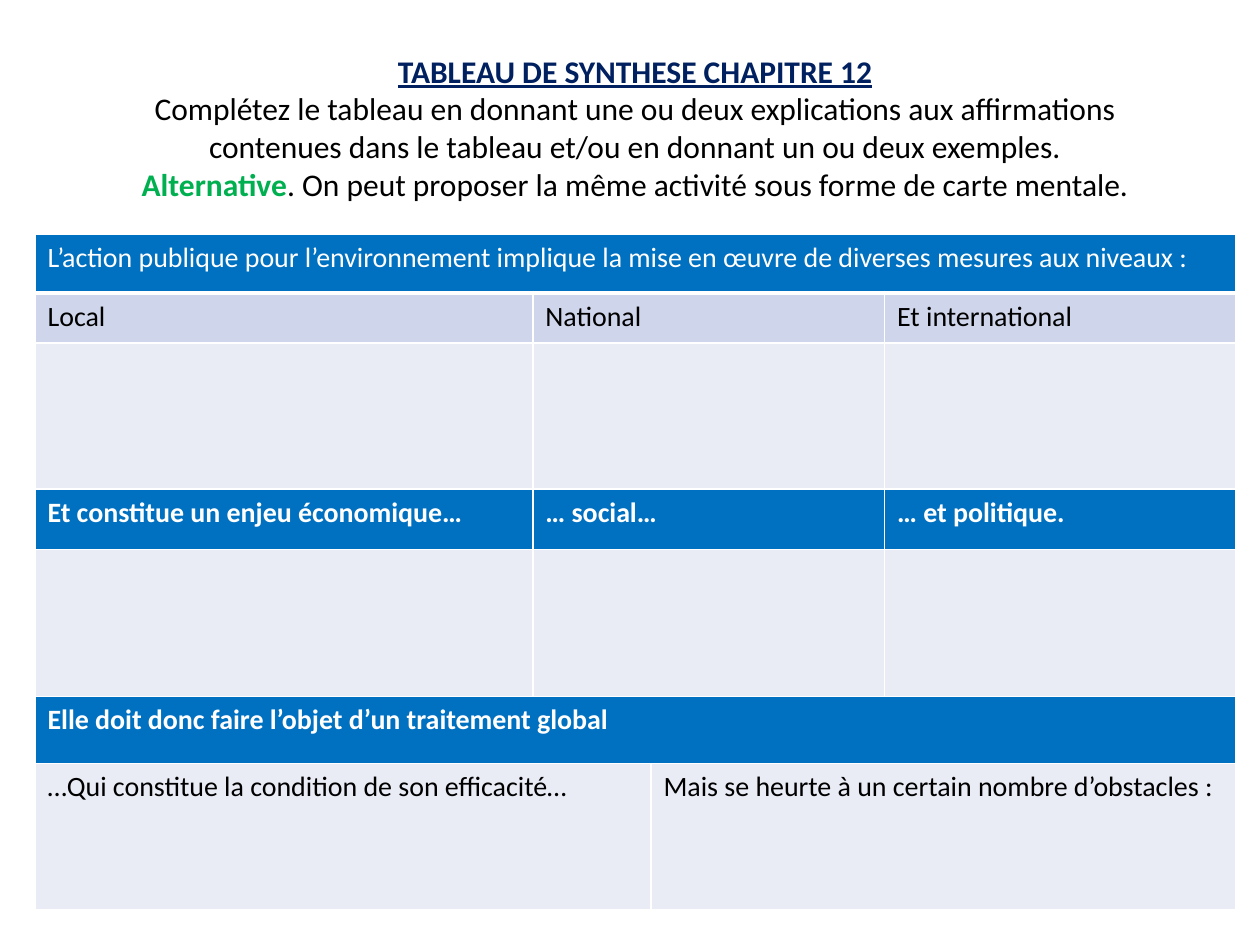
from lxml.etree import SubElement
from pptx import Presentation
from pptx.dml.color import RGBColor
from pptx.enum.text import MSO_AUTO_SIZE as AutoSize, PP_ALIGN as Align
from pptx.oxml.ns import qn
from pptx.util import Pt

NAVY = RGBColor(0x00, 0x20, 0x60)
GREEN = RGBColor(0x00, 0xB0, 0x50)
BLUE = RGBColor(0x00, 0x70, 0xC0)
LAVENDER = RGBColor(0xCF, 0xD5, 0xEA)
PALE = RGBColor(0xE9, 0xEB, 0xF5)
BLACK = RGBColor(0x00, 0x00, 0x00)
WHITE = RGBColor(0xFF, 0xFF, 0xFF)

# Heading: one list of (text, format) runs per paragraph
HEADING = [
    [("TABLEAU DE SYNTHESE CHAPITRE 12",
      {"color": NAVY, "bold": True, "underline": True})],
    [("Complétez le tableau en donnant une ou deux explications aux affirmations "
      "contenues dans le tableau et/ou en donnant un ou deux exemples.", {})],
    [("Alternative", {"color": GREEN, "bold": True}),
     (". On peut proposer la même activité sous forme de carte mentale.", {})],
]

# Table: (height, fill, text colour, bold, {first column: text})
COLUMN_WIDTHS = [284.5, 67.5, 133.5, 200.5]
EMPTY = {0: "", 1: "", 3: ""}
ROWS = [
    (33.5, BLUE, WHITE, False,
     {0: "L’action publique pour l’environnement implique la mise en œuvre "
         "de diverses mesures aux niveaux :"}),
    (28.5, LAVENDER, BLACK, False, {0: "Local", 1: "National", 3: "Et international"}),
    (83.5, PALE, BLACK, False, EMPTY),
    (34.5, BLUE, WHITE, True,
     {0: "Et constitue un enjeu économique…", 1: "… social…", 3: "… et politique."}),
    (84, PALE, BLACK, False, EMPTY),
    (38.5, BLUE, WHITE, True, {0: "Elle doit donc faire l’objet d’un traitement global"}),
    (83.5, PALE, BLACK, False,
     {0: "…Qui constitue la condition de son efficacité…",
      2: "Mais se heurte à un certain nombre d’obstacles :"}),
]


def add_text(paragraph, text, size=18, color=BLACK, bold=False, underline=False):
    run = paragraph.add_run()
    run.text = text
    font = run.font
    font.name, font.size = "Calibri", Pt(size)
    font.bold, font.underline = bold, underline
    font.color.rgb = color


def set_borders(cell, bottom=1):
    """White borders; they must be added before the cell gets its fill."""
    properties = cell._tc.get_or_add_tcPr()
    for side, width in (("L", 1), ("R", 1), ("T", 1), ("B", bottom)):
        line = SubElement(properties, qn(f"a:ln{side}"), w=str(Pt(width)))
        fill = SubElement(line, qn("a:solidFill"))
        SubElement(fill, qn("a:srgbClr"), val=str(WHITE))


presentation = Presentation()
presentation.slide_width, presentation.slide_height = Pt(720), Pt(540)
slide = presentation.slides.add_slide(presentation.slide_layouts[6])

# Heading
frame = slide.shapes.add_textbox(Pt(54), Pt(26), Pt(618), Pt(94.5)).text_frame
frame.word_wrap = True
frame.auto_size = AutoSize.SHAPE_TO_FIT_TEXT
for index, runs in enumerate(HEADING):
    paragraph = frame.add_paragraph() if index else frame.paragraphs[0]
    paragraph.alignment = Align.CENTER
    for text, style in runs:
        add_text(paragraph, text, **style)

# Summary table
column_count = len(COLUMN_WIDTHS)
table = slide.shapes.add_table(
    len(ROWS), column_count, Pt(20), Pt(134),
    Pt(sum(COLUMN_WIDTHS)), Pt(sum(row[0] for row in ROWS))).table
for column, width in zip(table.columns, COLUMN_WIDTHS):
    column.width = Pt(width)

for row, (height, fill, color, bold, texts) in enumerate(ROWS):
    table.rows[row].height = Pt(height)
    for cell in table.rows[row].cells:
        set_borders(cell, bottom=1 if row else 3)
        cell.fill.solid()
        cell.fill.fore_color.rgb = fill
    # Each cell reaches to the start of the next one
    starts = list(texts)
    for start, end in zip(starts, starts[1:] + [column_count]):
        cell = table.cell(row, start)
        if end - start > 1:
            cell.merge(table.cell(row, end - 1))
        if texts[start]:
            add_text(cell.text_frame.paragraphs[0], texts[start],
                     size=16, color=color, bold=bold)

presentation.save("out.pptx")
